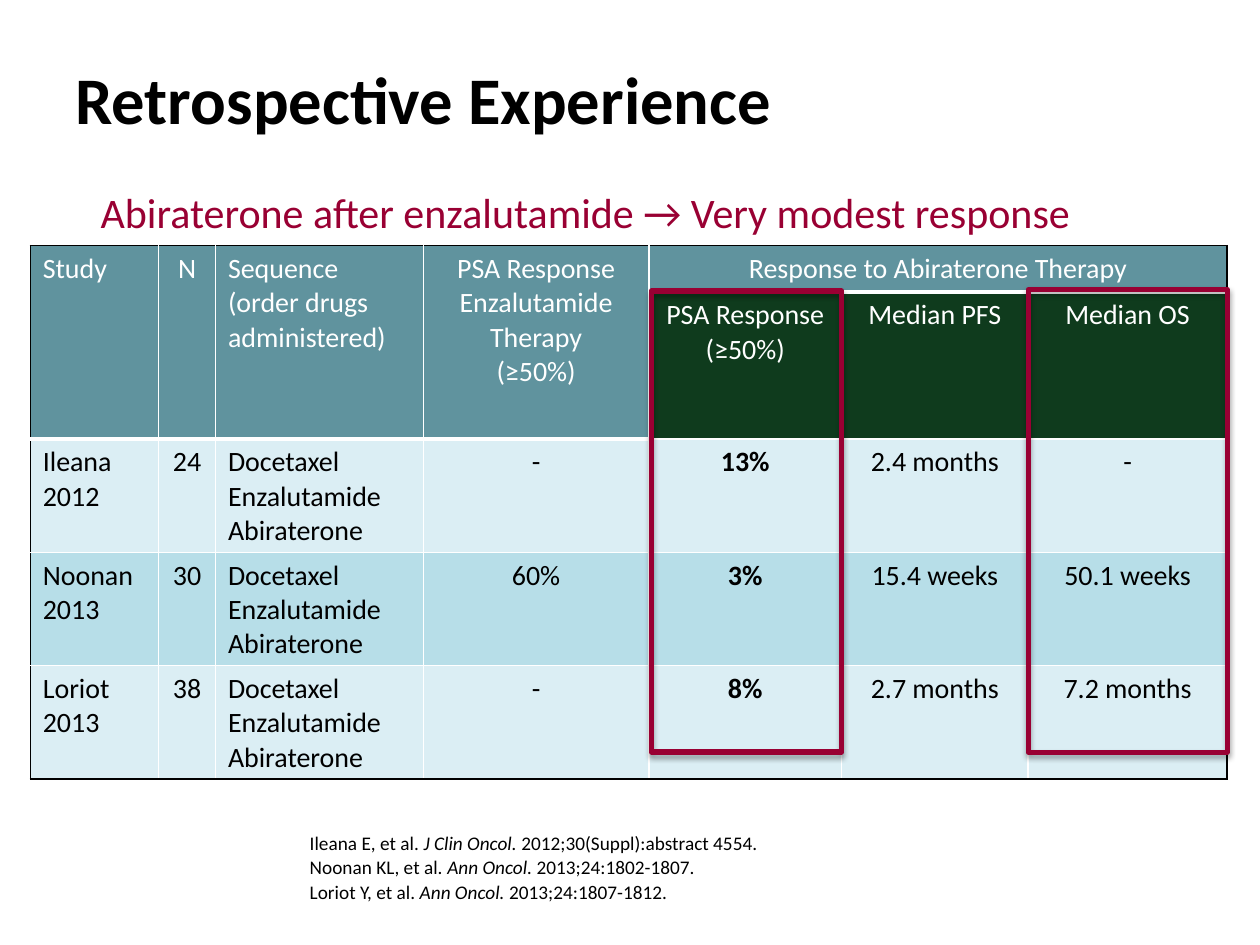
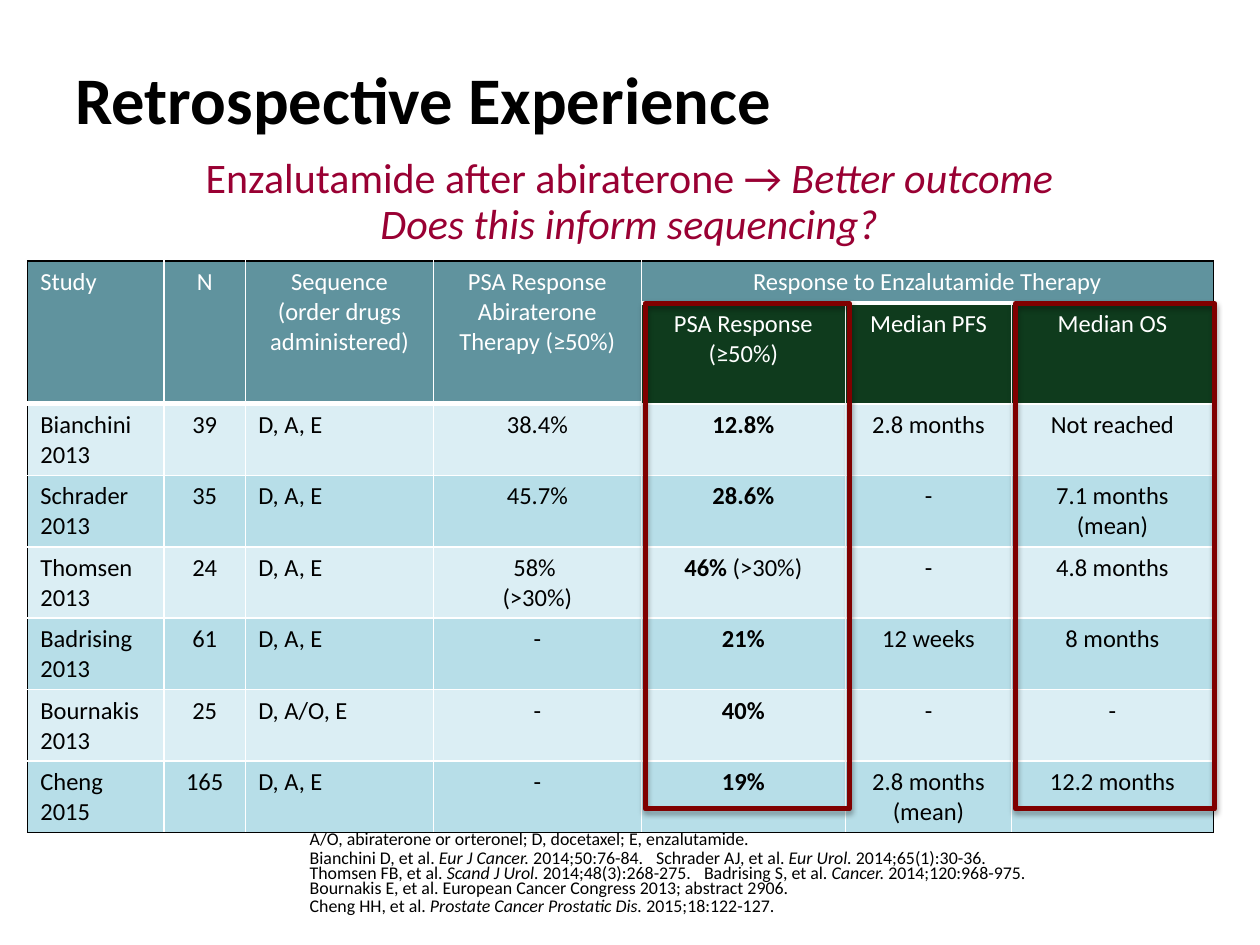
from lxml import etree
from pptx import Presentation
from pptx.dml.color import RGBColor
from pptx.enum.shapes import MSO_SHAPE
from pptx.enum.text import MSO_ANCHOR, PP_ALIGN
from pptx.oxml.ns import qn
from pptx.util import Inches, Pt

RECT = MSO_SHAPE.RECTANGLE
TOP, MIDDLE = MSO_ANCHOR.TOP, MSO_ANCHOR.MIDDLE
ALIGN = {"l": PP_ALIGN.LEFT, "c": PP_ALIGN.CENTER}
BLANK = 6
FONT = "Calibri"
COLS, ROWS = 100, 75  # slide grid
COLOR = {
    "black": "000000", "white": "FFFFFF", "wine": "990033", "maroon": "800000",
    "teal": "60939E", "green": "0F3B1D", "pale": "DBEEF4", "sky": "B7DEE8",
}


class Deck:
    """Holds the style and the current slide."""

    def __init__(self):
        self.prs = Presentation()
        self.prs.slide_width, self.prs.slide_height = Inches(10), Inches(7.5)
        self.slide = None

    def x(self, cols):
        return round(self.prs.slide_width * cols / COLS)

    def y(self, rows):
        return round(self.prs.slide_height * rows / ROWS)

    def place(self, area):
        left, top, width, height = area
        return self.x(left), self.y(top), self.x(width), self.y(height)

    def start(self, title):
        self.slide = self.prs.slides.add_slide(self.prs.slide_layouts[BLANK])
        self.text((5, 1.9, 90, 12.5), ["*" + title], 38, mark="bold",
                  anchor=MIDDLE, lead=0.9)

    def add_runs(self, para, text, size, color, mark):
        """Add runs; each * switches the mark (bold or italic) on or off."""
        for i, part in enumerate(text.split("*")):
            for j, line in enumerate(part.split("\n")):
                if j:
                    para.add_line_break()
                if not line:
                    continue
                run = para.add_run()
                run.text = line
                font = run.font
                font.name, font.size = FONT, Pt(size)
                font.color.rgb = RGBColor.from_string(COLOR[color])
                font.bold = mark == "bold" and i % 2 == 1
                font.italic = mark == "italic" and i % 2 == 1

    def fill(self, frame, paras, size, color="black", mark="italic",
             align="l", lead=1.0, gap=0, tabs=()):
        for i, text in enumerate(paras):
            para = frame.add_paragraph() if i else frame.paragraphs[0]
            para.alignment = ALIGN[align]
            para.line_spacing = lead
            if i and gap:
                para.space_before = Pt(gap)
            if "\t" in text:
                stops = etree.SubElement(para._p.get_or_add_pPr(), qn("a:tabLst"))
                for stop in tabs:
                    etree.SubElement(stops, qn("a:tab"), pos=str(self.x(stop)), algn="l")
            self.add_runs(para, text, size, color, mark)

    def text(self, area, paras, size, anchor=TOP, **style):
        frame = self.slide.shapes.add_textbox(*self.place(area)).text_frame
        frame.word_wrap = True
        frame.vertical_anchor = anchor
        self.fill(frame, paras, size, **style)

    def notes(self, paras, size, lead, tabs=()):
        self.text((23.6, 65.7, 71.4, 8), paras, size, lead=lead, gap=2, tabs=tabs)

    def frame(self, area, color):
        """Draw an open box with a soft shadow round a column."""
        box = self.slide.shapes.add_shape(RECT, *self.place(area))
        box.fill.background()
        box.line.color.rgb = RGBColor.from_string(COLOR[color])
        box.line.width = Pt(3)
        box.shadow.inherit = False
        effects = box._element.spPr.find(qn("a:effectLst"))
        shade = etree.SubElement(effects, qn("a:outerShdw"), blurRad=str(Pt(3.1)),
                                 dist=str(Pt(1.8)), dir="5400000", rotWithShape="0")
        tint = etree.SubElement(shade, qn("a:srgbClr"), val=COLOR["black"])
        etree.SubElement(tint, qn("a:alpha"), val="35000")

    def edge(self, cell, side, color, width):
        line = etree.SubElement(cell._tc.get_or_add_tcPr(), qn("a:ln" + side),
                                w=str(Pt(width)))
        solid = etree.SubElement(line, qn("a:solidFill"))
        etree.SubElement(solid, qn("a:srgbClr"), val=COLOR[color])

    def table(self, left, top, widths, heights, heads, body, size, heading):
        """Two header rows (the last three columns share a head), then the body."""
        area = left, top, sum(widths), sum(heights)
        count, wide = len(heights), len(widths)
        grid = self.slide.shapes.add_table(count, wide, *self.place(area)).table
        grid.first_row = grid.horz_banding = False
        for col, width in zip(grid.columns, widths):
            col.width = self.x(width)
        for row, height in zip(grid.rows, heights):
            row.height = self.y(height)
        for c in range(4):
            grid.cell(0, c).merge(grid.cell(1, c))
        grid.cell(0, 4).merge(grid.cell(0, wide - 1))

        for r, texts in enumerate(heads + body):
            for c in range(wide):
                cell = grid.cell(r, c)
                # Black outside, white inside
                right = c + cell.span_width == wide
                self.edge(cell, "L", "white" if c else "black", 1)
                self.edge(cell, "R", "black" if right else "white", 1)
                self.edge(cell, "T", "white" if r else "black", 1)
                self.edge(cell, "B", "black" if r == count - 1 else "white",
                          1 if r else 3)
                cell.fill.solid()
                shade = ("teal", "green")[r] if r < 2 else ("pale", "sky")[r % 2]
                cell.fill.fore_color.rgb = RGBColor.from_string(COLOR[shade])
                if c < len(texts) and texts[c]:
                    self.fill(cell.text_frame, texts[c].split("|"), size,
                              color="white" if r < 2 else "black", mark="bold",
                              align=(heading if r < 2 else "lclcccc")[c])


def heads(sequence, before, after):
    return [
        ["Study", "N", sequence, before, f"Response to {after} Therapy"],
        [""] * 4 + ["PSA Response|(≥50%)", "Median PFS", "Median OS"],
    ]


TITLE = "Retrospective Experience"
ORDER = "Sequence|(order drugs administered)"
DRUGS = "Docetaxel|Enzalutamide|Abiraterone"


def first(deck):
    deck.start(TITLE)
    deck.notes([
        "Ileana E, et al. *J Clin Oncol.* 2012;30(Suppl):abstract 4554.",
        "Noonan KL, et al. *Ann Oncol.* 2013;24:1802-1807.",
        "Loriot Y, et al. *Ann Oncol.* 2013;24:1807-1812.",
    ], 11, 0.9)
    deck.table(
        2.4, 19.5, [10.2, 4.5, 16.5, 17.9, 15.3, 14.8, 15.8],
        [3.5, 9.5, 8.2, 8.2, 8.8],
        heads(ORDER, "PSA Response Enzalutamide Therapy|(≥50%)", "Abiraterone"),
        [
            ["Ileana 2012", "24", DRUGS, "-", "*13%", "2.4 months", "-"],
            ["Noonan 2013", "30", DRUGS, "60%", "*3%", "15.4 weeks", "50.1 weeks"],
            ["Loriot 2013", "38", DRUGS, "-", "*8%", "2.7 months", "7.2 months"],
        ], 16, "lclcccc")
    deck.text((7, 14.3, 87.1, 5),
              ["Abiraterone after enzalutamide → Very modest response"], 24, color="wine")
    deck.frame((51.7, 23.1, 15.1, 36.6), "wine")
    deck.frame((81.6, 23, 15.8, 36.7), "wine")


def second(deck):
    deck.start(TITLE)
    deck.notes([
        "A/O, abiraterone or orteronel; D, docetaxel; E, enzalutamide.",
        "Bianchini D, et al. *Eur J Cancer.* 2014;50:76-84.\t"
        "Schrader AJ, et al. *Eur Urol.* 2014;65(1):30-36.\n"
        "Thomsen FB, et al. *Scand J Urol.* 2014;48(3):268-275.\t"
        "Badrising S, et al. *Cancer.* 2014;120:968-975.\n"
        "Bournakis E, et al. European Cancer Congress 2013; abstract 2906.",
        "Cheng HH, et al. *Prostate Cancer Prostatic Dis.* 2015;18:122-127.",
    ], 10.2, 0.7, tabs=(27.5, 31.3))
    deck.text((11.6, 12, 76.7, 8.3),
              ["Enzalutamide after abiraterone → *Better outcome",
               "*Does this inform sequencing?"],
              24, color="wine", align="c", lead=0.9)
    deck.table(
        2.2, 20.7, [10.8, 6.5, 14.9, 16.5, 16.2, 13.2, 16],
        [3.1, 6.3] + [5.2] * 6,
        heads(ORDER, "PSA Response Abiraterone Therapy (≥50%)", "Enzalutamide"),
        [
            ["Bianchini 2013", "39", "D, A, E", "38.4%", "*12.8%", "2.8 months",
             "Not reached"],
            ["Schrader 2013", "35", "D, A, E", "45.7%", "*28.6%", "-",
             "7.1 months (mean)"],
            ["Thomsen|2013", "24", "D, A, E", "58% |(>30%)", "*46% *(>30%)", "-",
             "4.8 months"],
            ["Badrising|2013", "61", "D, A, E", "-", "*21%", "12 weeks", "8 months"],
            ["Bournakis|2013", "25", "D, A/O, E", "-", "*40%", "-", "-"],
            ["Cheng|2015", "165", "D, A, E", "-", "*19%", "2.8 months|(mean)",
             "12.2 months"],
        ], 14, "lcccccc")
    for left, width in ((80.6, 15.8), (51.2, 16.2)):
        deck.frame((left, 24.1, width, 40.1), "maroon")


def main():
    deck = Deck()
    first(deck)
    second(deck)
    deck.prs.save("out.pptx")


if __name__ == "__main__":
    main()
